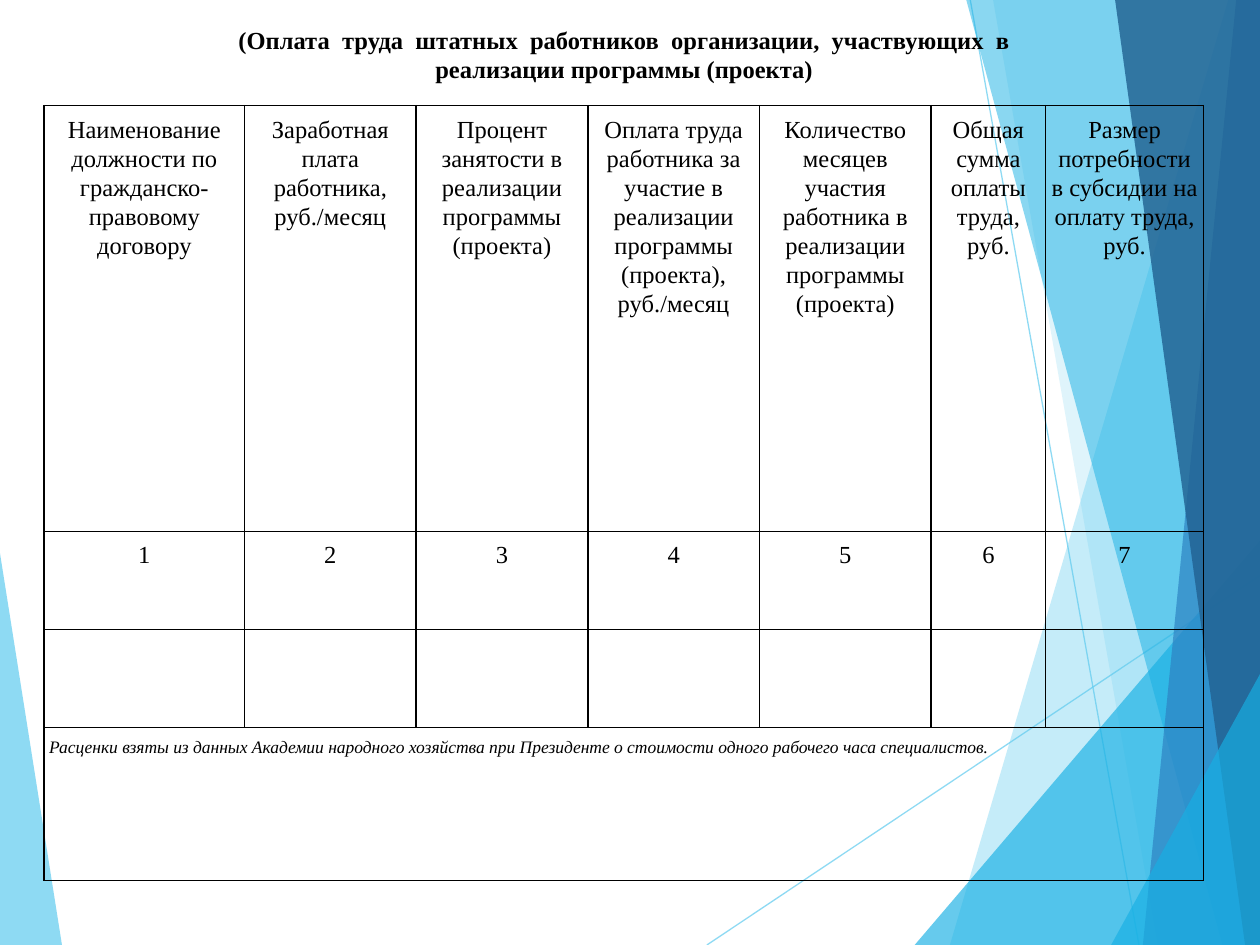
from lxml import etree
from pptx import Presentation
from pptx import util as u
from pptx.dml.color import RGBColor
from pptx.enum import shapes, text
from pptx.oxml.ns import qn

FONT = "Times New Roman"
BLACK = "000000"
SKY, BLUE, STEEL, NAVY = "5FCBEF", "17B0E4", "2E83C3", "226292"

HEADERS = [
    "Наименование должности по гражданско-правовому договору",
    "Заработная плата работника, руб./месяц",
    "Процент занятости в реализации программы (проекта)",
    "Оплата труда работника за участие в реализации программы (проекта), руб./месяц",
    "Количество месяцев участия работника в реализации программы (проекта)",
    "Общая сумма оплаты труда, руб.",
    "Размер потребности в субсидии на оплату труда, руб.",
]
NOTE = ("Расценки взяты из данных Академии народного хозяйства при Президенте "
        "о стоимости одного рабочего часа специалистов.")
TITLE = ["(Оплата  труда  штатных  работников  организации,  участвующих  в",
         "реализации программы (проекта)"]


def paint(fmt, color, alpha=100):
    """Give a fill a solid colour with an opacity in percent."""
    fmt.solid()
    fmt.fore_color.rgb = RGBColor.from_string(color)
    if alpha < 100:
        clr = next(fmt._xPr.iter(qn("a:srgbClr")))
        etree.SubElement(clr, qn("a:alpha"), val=str(alpha * 1000))


def add_shard(s, box, edge, top, bottom_x, color, alpha):
    """Draw a shard from a top point to the bottom, closed along a side edge."""
    left, y0, _, height = box
    top_x, top_y = top
    points = [(u.Cm(left + x), u.Cm(y0 + y)) for x, y in
              [(top_x, top_y), (bottom_x, height), (edge, height), (edge, top_y)]]
    builder = s.shapes.build_freeform(*points[0])
    builder.add_line_segments(points[1:])
    sp = builder.convert_to_shape()
    sp.shadow.inherit = False
    sp.line.fill.background()
    paint(sp.fill, color, alpha)


def add_ray(s, box, start, end):
    """Draw a thin translucent line across the box."""
    left, top = box[:2]
    cx = s.shapes.add_connector(
        shapes.MSO_CONNECTOR.STRAIGHT,
        u.Cm(left + start[0]), u.Cm(top + start[1]),
        u.Cm(left + end[0]), u.Cm(top + end[1]))
    cx.line.width = u.Pt(0.75)
    paint(cx.line.fill, SKY, 70)
    etree.SubElement(cx._element.spPr, qn("a:effectLst"))


def add_decor(s, box):
    """Draw the faceted background of the box."""
    width, height = box[2:]
    add_shard(s, box, 0, (0, 11.15), 1.25, SKY, 70)
    add_ray(s, box, (14.25, height), (width, 11.6))
    add_ray(s, box, (19.56, 0), (22.96, height))
    for top, bottom_x, color, alpha in [
            ((24.76, 0), 19.15, SKY, 36),
            ((20.02, 0), 23.34, SKY, 20),
            ((width, 10.9), 18.44, BLUE, 66),
            ((19.48, 0), 24.64, BLUE, 50),
            ((24.92, 0), 23.04, STEEL, 70),
            ((22.48, 0), 25.1, NAVY, 82),
            ((width, 13.59), 22.4, BLUE, 66)]:
        add_shard(s, box, width, top, bottom_x, color, alpha)


def style(p, size, align, bold=False, italic=False):
    """Set the font and alignment of a paragraph."""
    p.alignment = align
    f = p.font
    f.name, f.size, f.bold, f.italic = FONT, u.Pt(size), bold, italic
    f.color.rgb = RGBColor.from_string(BLACK)


def format_cell(cell):
    """Make a cell transparent with thin black borders."""
    cell.margin_left = cell.margin_right = u.Cm(0.1)
    cell.margin_top = cell.margin_bottom = u.Cm(0.18)
    cell.fill.background()
    tcPr = cell._tc.get_or_add_tcPr()
    for i, side in enumerate(("lnL", "lnR", "lnT", "lnB")):
        ln = etree.Element(qn(f"a:{side}"), w=str(u.Pt(1)))
        fill = etree.SubElement(ln, qn("a:solidFill"))
        etree.SubElement(fill, qn("a:srgbClr"), val=BLACK)
        tcPr.insert(i, ln)


def add_pay_table(s, box):
    """Add the pay table with its numbered columns and closing note."""
    widths = [4.04] + [3.46] * 4 + [2.31, 3.18]
    heights = [8.58, 1.98, 1.98, 3.08]
    numbers = [str(n) for n in range(1, len(HEADERS) + 1)]
    rows = [HEADERS, numbers, [""] * len(HEADERS), [NOTE]]
    tbl = s.shapes.add_table(len(rows), len(widths), *map(u.Cm, box)).table
    tbl.first_row = tbl.horz_banding = False
    for col, w in zip(tbl.columns, widths):
        col.width = u.Cm(w)
    for row, h in zip(tbl.rows, heights):
        row.height = u.Cm(h)
    for cell in tbl.iter_cells():
        format_cell(cell)
    tbl.cell(3, 0).merge(tbl.cell(3, len(widths) - 1))
    for i, row in enumerate(rows):
        for j, value in enumerate(row):
            p = tbl.cell(i, j).text_frame.paragraphs[0]
            p.text = value
            p.line_spacing = 1.07
            if value == NOTE:
                style(p, 10, text.PP_ALIGN.LEFT, italic=True)
            else:
                style(p, 14, text.PP_ALIGN.CENTER)


def set_title(s, box):
    """Place the two-line title in front of the background."""
    sp = s.shapes.title
    sp.left, sp.top, sp.width, sp.height = map(u.Cm, box)
    s.shapes._spTree.append(sp._element)
    tf = sp.text_frame
    tf.word_wrap = True
    tf.auto_size = text.MSO_AUTO_SIZE.NONE
    tf.vertical_anchor = text.MSO_ANCHOR.MIDDLE
    tf.margin_bottom = u.Cm(0.9)
    tf.text = "\n".join(TITLE)
    for p in tf.paragraphs:
        p.space_before = u.Pt(0)
        style(p, 14, text.PP_ALIGN.CENTER, bold=True)


def main():
    """Build and save the slide."""
    prs = Presentation()
    prs.slide_width, prs.slide_height = u.Cm(25.4), u.Cm(19.05)
    s = prs.slides.add_slide(prs.slide_layouts[5])
    add_decor(s, (0, 0, 25.4, 19.05))
    add_pay_table(s, (0.89, 2.13, 23.37, 15.62))
    set_title(s, (0.89, 0.36, 23.39, 2.24))
    prs.save("out.pptx")


if __name__ == "__main__":
    main()
